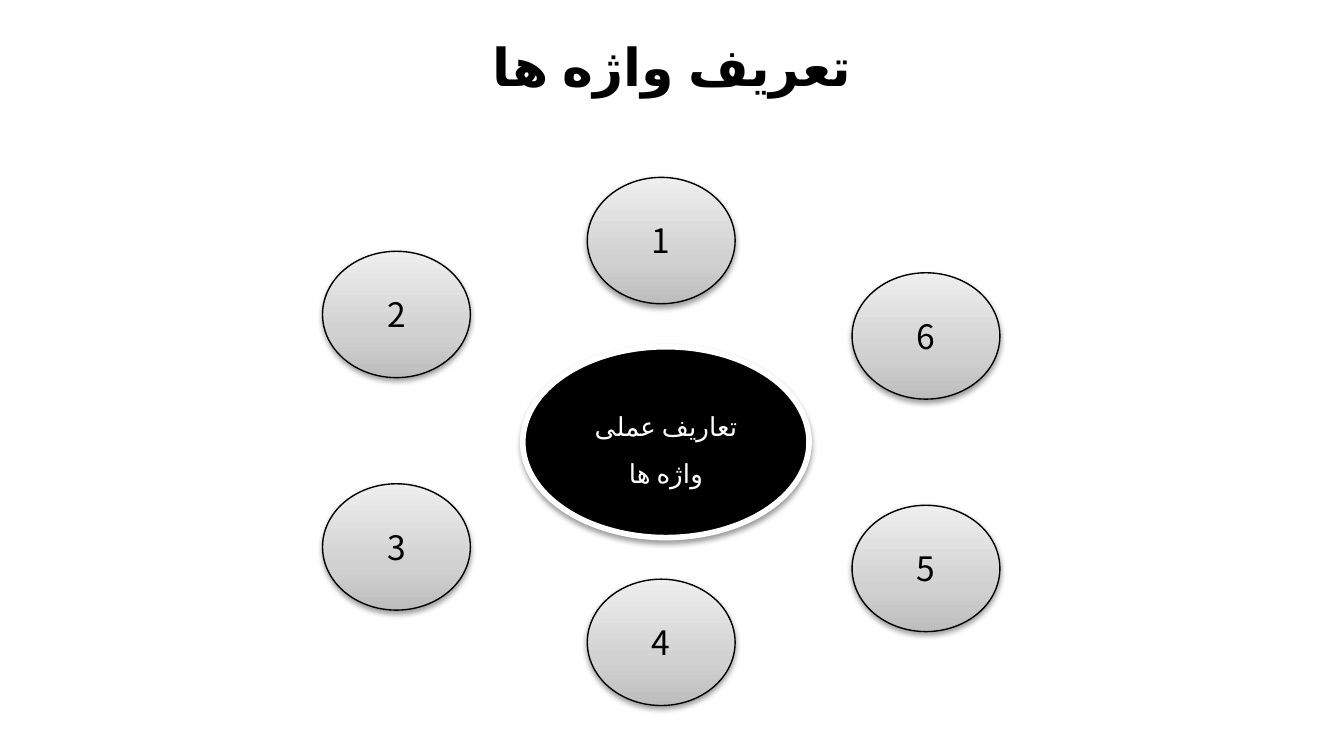
from dataclasses import dataclass

from lxml.etree import SubElement
from pptx import Presentation
from pptx.dml.color import RGBColor
from pptx.enum.lang import MSO_LANGUAGE_ID
from pptx.enum.shapes import MSO_SHAPE
from pptx.enum.text import MSO_ANCHOR, PP_ALIGN
from pptx.oxml.ns import qn
from pptx.util import Inches, Pt


@dataclass(frozen=True)
class Theme:
    black: str = "000000"
    white: str = "FFFFFF"
    gradient: tuple = ((0, "BDBDBD"), (35, "D1D1D1"), (100, "EEEEEE"))
    title_font: str = "Arial"
    body_font: str = "Noto Sans CJK KR"
    title_size: int = 28
    center_size: int = 14
    number_size: int = 18


THEME = Theme()


def rgb(color):
    return RGBColor.from_string(color)


def write_lines(frame, lines, font_name, size, color, bold=False, persian=False, spacing=None):
    frame.word_wrap = True
    frame.vertical_anchor = MSO_ANCHOR.MIDDLE
    for index, line in enumerate(lines):
        paragraph = frame.paragraphs[0] if index == 0 else frame.add_paragraph()
        paragraph.text = line
        paragraph.alignment = PP_ALIGN.CENTER
        if spacing:
            paragraph.line_spacing = spacing
        font = paragraph.font
        font.name, font.size, font.bold = font_name, Pt(size), bold
        font.color.rgb = rgb(color)
        if persian:
            properties = paragraph._p.get_or_add_pPr()
            properties.set("rtl", "1")
            SubElement(properties.find(qn("a:defRPr")), qn("a:cs"), typeface=font_name)
            paragraph.runs[0].font.language_id = MSO_LANGUAGE_ID.FARSI


def add_shadow(shape):
    effects = SubElement(shape._element.spPr, qn("a:effectLst"))
    shadow = SubElement(effects, qn("a:outerShdw"), blurRad=str(Pt(3.1)), dist=str(Pt(1.6)),
                        dir="5400000", rotWithShape="0")
    color = SubElement(shadow, qn("a:srgbClr"), val=THEME.black)
    SubElement(color, qn("a:alpha"), val="38000")


def fill_gradient(shape):
    shape.fill.gradient()
    shape.fill.gradient_angle = 90
    stops = shape._element.spPr.find(qn("a:gradFill")).find(qn("a:gsLst"))
    for stop in list(stops):
        stops.remove(stop)
    for position, color in THEME.gradient:
        stop = SubElement(stops, qn("a:gs"), pos=str(position * 1000))
        SubElement(stop, qn("a:srgbClr"), val=color)


def add_ellipse(slide, box, line_color, line_width):
    shape = slide.shapes.add_shape(MSO_SHAPE.OVAL, *map(Inches, box))
    shape.line.color.rgb = rgb(line_color)
    shape.line.width = Pt(line_width)
    add_shadow(shape)
    return shape


def add_title(slide, box, text):
    title = slide.shapes.title
    title.left, title.top, title.width, title.height = map(Inches, box)
    write_lines(title.text_frame, [text], THEME.title_font, THEME.title_size,
                THEME.black, bold=True, persian=True)


def add_center(slide, box, lines):
    shape = add_ellipse(slide, box, THEME.white, 3)
    shape.fill.solid()
    shape.fill.fore_color.rgb = rgb(THEME.black)
    write_lines(shape.text_frame, lines, THEME.body_font, THEME.center_size,
                THEME.white, persian=True, spacing=1.5)


def add_number_ring(slide, box):
    """Number six ellipses counterclockwise from the top of the box."""
    left, top, width, height = box
    node_width, node_height = 1.1, 0.94
    middle, right = (width - node_width) / 2, width - node_width
    offsets = [(middle, 0), (0, 0.55), (0, 2.28),
               (middle, height - node_height), (right, 2.44), (right, 0.71)]
    for number, (x, y) in enumerate(offsets, start=1):
        shape = add_ellipse(slide, (left + x, top + y, node_width, node_height),
                            THEME.black, 0.75)
        fill_gradient(shape)
        write_lines(shape.text_frame, [str(number)], THEME.body_font,
                    THEME.number_size, THEME.black)


def main():
    presentation = Presentation()
    presentation.slide_width = Inches(10)
    presentation.slide_height = Inches(10 * 9 / 16)
    slide = presentation.slides.add_slide(presentation.slide_layouts[5])
    add_title(slide, (0, 0, 10, 0.97), "تعریف واژه ها")
    add_center(slide, (3.89, 2.58, 2.13, 1.42), ["تعاریف عملی", "واژه ها"])
    add_number_ring(slide, (2.4, 1.32, 5.04, 3.93))
    presentation.save("out.pptx")


if __name__ == "__main__":
    main()
